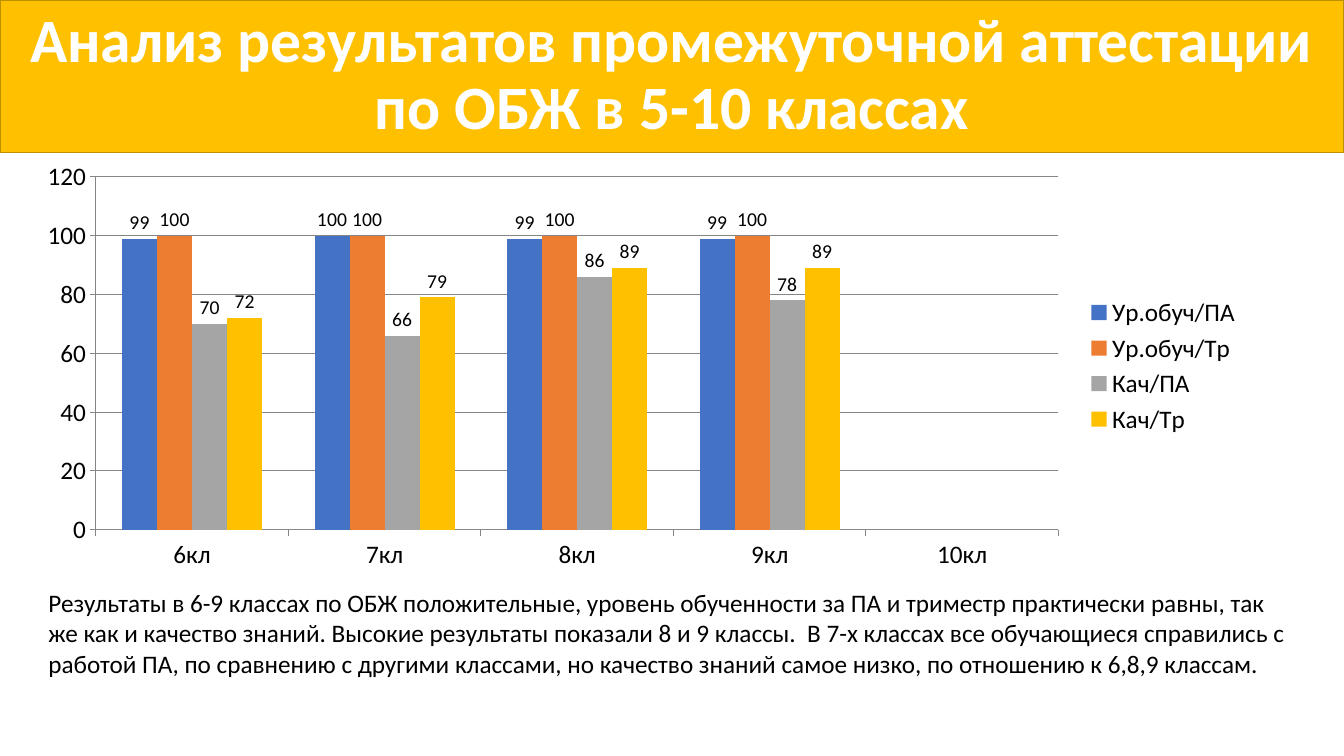
"""Builds a slide with exam results for safety lessons by class."""
from dataclasses import dataclass

from pptx import Presentation
from pptx.chart.data import CategoryChartData
from pptx.dml.color import RGBColor as Rgb
from pptx.enum.chart import XL_CHART_TYPE as ChartType
from pptx.enum.chart import XL_LABEL_POSITION as LabelPosition
from pptx.enum.chart import XL_LEGEND_POSITION as LegendPosition
from pptx.enum.chart import XL_TICK_MARK as TickMark
from pptx.enum.text import MSO_ANCHOR as Anchor
from pptx.enum.text import MSO_AUTO_SIZE as AutoSize
from pptx.enum.text import PP_ALIGN as Align
from pptx.util import Cm, Pt

HEADING = "Анализ результатов промежуточной аттестации по ОБЖ в 5-10 классах"
CLASSES = ["6кл", "7кл", "8кл", "9кл", "10кл"]
RESULTS = {
    "Ур.обуч/ПА": (99, 100, 99, 99, None),
    "Ур.обуч/Тр": (100, 100, 100, 100, None),
    "Кач/ПА": (70, 66, 86, 78, None),
    "Кач/Тр": (72, 79, 89, 89, None),
}
CONCLUSION = (
    "Результаты в 6-9 классах по ОБЖ положительные, уровень обученности за ПА "
    "и триместр практически равны, так же как и качество знаний. Высокие "
    "результаты показали 8 и 9 классы.  В 7-х классах все обучающиеся "
    "справились с работой ПА, по сравнению с другими классами, но качество "
    "знаний самое низко, по отношению к 6,8,9 классам."
)


@dataclass(frozen=True)
class Theme:
    font: str = "Calibri"
    heading_size: int = 44
    text_size: int = 18
    label_size: int = 14
    text: str = "000000"
    heading: str = "FFFFFF"
    banner: str = "FFC000"
    banner_edge: str = "BD8E00"
    grid: str = "868686"
    series: tuple = ("4472C4", "ED7D31", "A5A5A5", "FFC000")


def apply(target, formats):
    for name, value in formats.items():
        setattr(target, name, value)


class SlideBuilder:
    def __init__(self, slide, theme):
        self.slide = slide
        self.theme = theme

    def style_font(self, font, size, color, bold=False):
        apply(font, {"name": self.theme.font, "size": Pt(size), "bold": bold})
        font.color.rgb = Rgb.from_string(color)

    def style_line(self, line, color, width):
        line.color.rgb = Rgb.from_string(color)
        line.width = Pt(width)

    def fill_text(self, frame, wording, size, color, bold=False):
        paragraph = frame.paragraphs[0]
        run = paragraph.add_run()
        run.text = wording
        self.style_font(run.font, size, color, bold)
        return paragraph

    def title(self, wording, **place):
        theme = self.theme
        banner = self.slide.shapes.title
        apply(banner, place)
        banner.fill.solid()
        banner.fill.fore_color.rgb = Rgb.from_string(theme.banner)
        self.style_line(banner.line, theme.banner_edge, 1)
        apply(banner.text_frame, {
            "word_wrap": True,
            "auto_size": AutoSize.NONE,
            "vertical_anchor": Anchor.MIDDLE,
        })
        heading = self.fill_text(
            banner.text_frame, wording, theme.heading_size, theme.heading, True)
        apply(heading, {"alignment": Align.CENTER, "line_spacing": 0.9})

    def column_chart(self, categories, results, *place):
        theme = self.theme
        chart_data = CategoryChartData()
        chart_data.categories = categories
        for name, marks in results.items():
            chart_data.add_series(name, marks)
        chart = self.slide.shapes.add_chart(
            ChartType.COLUMN_CLUSTERED, *place, chart_data).chart
        apply(chart, {"has_title": False, "has_legend": True})
        self.style_font(chart.font, theme.text_size, theme.text)
        apply(chart.legend, {"position": LegendPosition.RIGHT, "include_in_layout": False})
        plot = chart.plots[0]
        apply(plot, {"gap_width": 150, "overlap": 0, "vary_by_categories": False})
        for series, color in zip(plot.series, theme.series):
            series.format.fill.solid()
            series.format.fill.fore_color.rgb = Rgb.from_string(color)
            labels = series.data_labels
            apply(labels, {"show_value": True, "position": LabelPosition.OUTSIDE_END})
            self.style_font(labels.font, theme.label_size, theme.text)
        value_axis = chart.value_axis
        apply(value_axis, {
            "minimum_scale": 0,
            "maximum_scale": 120,
            "major_unit": 20,
            "has_major_gridlines": True,
        })
        for axis in (chart.category_axis, value_axis):
            axis.major_tick_mark = TickMark.OUTSIDE
            self.style_line(axis.format.line, theme.grid, 0.75)
        self.style_line(value_axis.major_gridlines.format.line, theme.grid, 0.75)

    def text_box(self, wording, *place):
        frame = self.slide.shapes.add_textbox(*place).text_frame
        apply(frame, {"word_wrap": True, "auto_size": AutoSize.SHAPE_TO_FIT_TEXT})
        self.fill_text(frame, wording, self.theme.text_size, self.theme.text)


def main():
    deck = Presentation()
    apply(deck, {"slide_width": Cm(33.87), "slide_height": Cm(19.05)})
    builder = SlideBuilder(deck.slides.add_slide(deck.slide_layouts[5]), Theme())
    builder.title(HEADING, left=Cm(0), top=Cm(0), width=deck.slide_width, height=Cm(3.84))
    builder.column_chart(CLASSES, RESULTS, Cm(0.58), Cm(3.86), Cm(30.96), Cm(10.72))
    builder.text_box(CONCLUSION, Cm(0.97), Cm(14.68), Cm(31.8), Cm(2.57))
    deck.save("out.pptx")


if __name__ == "__main__":
    main()
